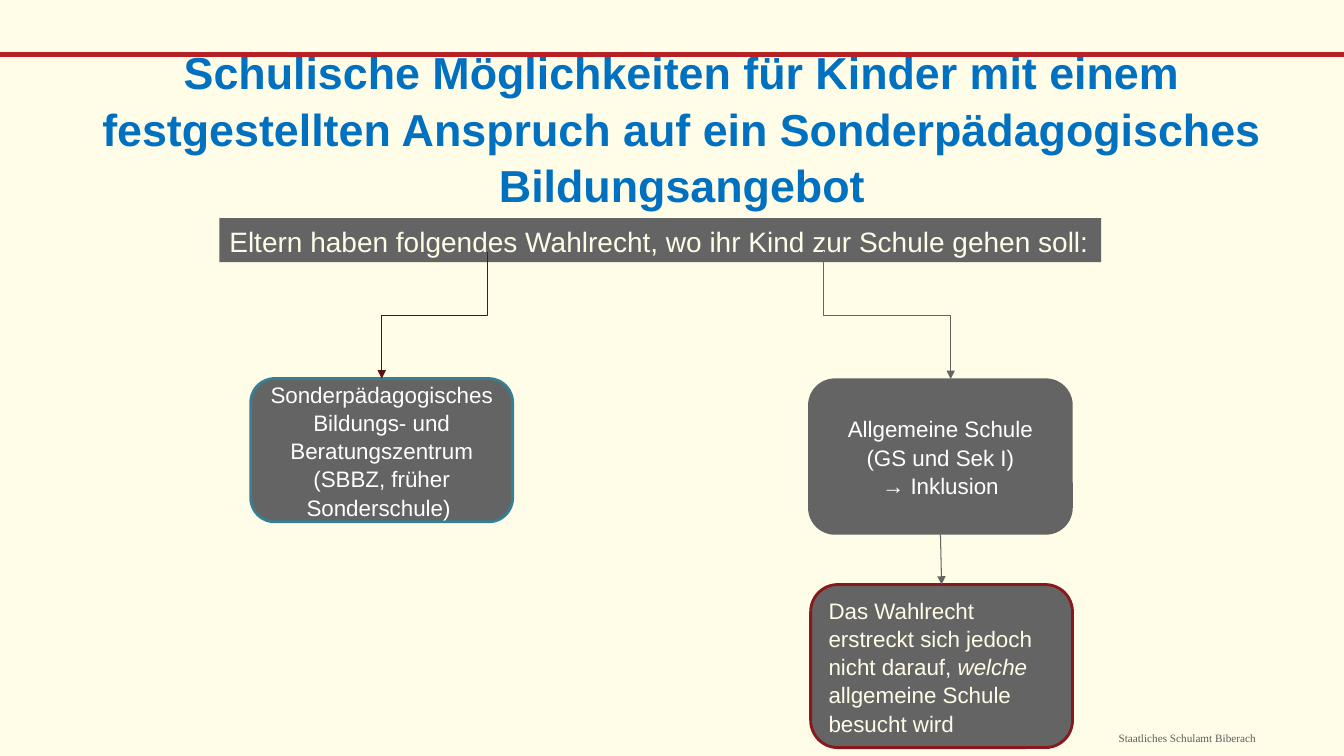
import pptx
import pptx.dml.color
import pptx.enum.shapes
import pptx.enum.text
import pptx.oxml.ns
import pptx.util
from lxml import etree

Cm = pptx.util.Cm
Pt = pptx.util.Pt
RGBColor = pptx.dml.color.RGBColor
SHAPE = pptx.enum.shapes.MSO_SHAPE
CONNECTOR = pptx.enum.shapes.MSO_CONNECTOR
ANCHOR = pptx.enum.text.MSO_ANCHOR
ALIGN = pptx.enum.text.PP_ALIGN
qn = pptx.oxml.ns.qn

CREAM = RGBColor(0xFF, 0xFC, 0xE7)
WHITE = RGBColor(0xFF, 0xFF, 0xFF)
GRAY = RGBColor(0x64, 0x64, 0x64)
FOOTER_GRAY = RGBColor(0x5D, 0x5D, 0x5D)
RED = RGBColor(0xB7, 0x20, 0x25)
DARK_RED = RGBColor(0x87, 0x18, 0x1B)
MAROON = RGBColor(0x5C, 0x10, 0x13)
TEAL = RGBColor(0x37, 0x7F, 0x92)
BLUE = RGBColor(0x00, 0x70, 0xC0)

LINE_SPACING = 1.05


def format_text(frame, size, color, align=ALIGN.LEFT, font="Arial", bold=False):
    frame.word_wrap = True
    for paragraph in frame.paragraphs:
        paragraph.alignment = align
        paragraph.line_spacing = LINE_SPACING
        for run in paragraph.runs:
            run.font.name = font
            run.font.size = Pt(size)
            run.font.bold = bold
            run.font.color.rgb = color


def add_block(slide, preset, box, fill, outline=None, width=2):
    block = slide.shapes.add_shape(preset, *map(Cm, box))
    block.shadow.inherit = False
    block.fill.solid()
    block.fill.fore_color.rgb = fill
    if outline is None:
        block.line.fill.background()
    else:
        block.line.color.rgb = outline
        block.line.width = Pt(width)
    block.text_frame.vertical_anchor = ANCHOR.MIDDLE
    return block


def add_arrow(slide, kind, start, end, color):
    arrow = slide.shapes.add_connector(kind, *map(Cm, start + end))
    arrow.line.color.rgb = color
    arrow.line.width = Pt(0.75)
    properties = arrow._element.spPr
    line = properties.find(qn("a:ln"))
    etree.SubElement(line, qn("a:tailEnd"), type="triangle")
    etree.SubElement(properties, qn("a:effectLst"))
    return arrow


def add_falling_elbow(slide, start, end, color):
    center_x = (start[0] + end[0]) / 2
    center_y = (start[1] + end[1]) / 2
    half_width = (end[1] - start[1]) / 2
    half_height = abs(end[0] - start[0]) / 2
    to_right = end[0] > start[0]
    if to_right:
        half_width = -half_width
    elbow = add_arrow(
        slide, CONNECTOR.ELBOW,
        (center_x - half_width, center_y - half_height),
        (center_x + half_width, center_y + half_height), color)
    degrees = 270 if to_right else 90
    elbow._element.spPr.find(qn("a:xfrm")).set("rot", str(degrees * 60000))


def add_title(slide):
    title = slide.shapes.title
    title.left, title.top, title.width, title.height = map(Cm, (2.13, 1.85, 30.12, 3.48))
    frame = title.text_frame
    frame.text = ("Schulische Möglichkeiten für Kinder mit einem festgestellten "
                  "Anspruch auf ein Sonderpädagogisches Bildungsangebot")
    frame.auto_size = pptx.enum.text.MSO_AUTO_SIZE.NONE
    frame.vertical_anchor = ANCHOR.BOTTOM
    frame.margin_left = frame.margin_right = frame.margin_top = frame.margin_bottom = 0
    format_text(frame, 32, BLUE, ALIGN.CENTER, bold=True)


def add_footer(slide):
    footer = slide.shapes.add_textbox(*map(Cm, (27.94, 18.29, 5.18, 0.61)))
    footer.text_frame.text = "Staatliches Schulamt Biberach"
    format_text(footer.text_frame, 8, FOOTER_GRAY, font="Times New Roman")


def add_restriction(slide):
    restriction = add_block(slide, SHAPE.ROUNDED_RECTANGLE,
                            (20.43, 14.73, 6.6, 4.11), GRAY, DARK_RED)
    paragraph = restriction.text_frame.paragraphs[0]
    for wording, italic in (
            ("Das Wahlrecht erstreckt sich jedoch nicht darauf, ", False),
            ("welche", True),
            (" allgemeine Schule besucht wird", False)):
        run = paragraph.add_run()
        run.text = wording
        run.font.italic = italic
    format_text(restriction.text_frame, 16, CREAM)
    return restriction


def main():
    presentation = pptx.Presentation()
    presentation.slide_width = Cm(33.87)
    presentation.slide_height = Cm(19.05)
    slide = presentation.slides.add_slide(presentation.slide_layouts[5])
    slide.background.fill.solid()
    slide.background.fill.fore_color.rgb = CREAM

    add_footer(slide)
    add_block(slide, SHAPE.RECTANGLE, (0, 1.32, 33.87, 0.1), RED, RED, 0.75)
    add_title(slide)

    choice = add_block(slide, SHAPE.RECTANGLE, (5.53, 5.5, 22.22, 1.11), GRAY)
    choice.text_frame.text = ("Eltern haben folgendes Wahlrecht, "
                              "wo ihr Kind zur Schule gehen soll:")
    format_text(choice.text_frame, 20, CREAM)

    add_falling_elbow(slide, (20.75, 6.33), (23.96, 9.55), GRAY)

    general_school = add_block(slide, SHAPE.ROUNDED_RECTANGLE,
                               (20.4, 9.57, 6.6, 3.87), GRAY, GRAY)
    general_school.text_frame.text = "Allgemeine Schule\n(GS und Sek I)\n→ Inklusion"
    format_text(general_school.text_frame, 16, WHITE, ALIGN.CENTER)

    special_school = add_block(slide, SHAPE.ROUNDED_RECTANGLE,
                               (6.32, 9.54, 6.6, 3.61), GRAY, TEAL)
    special_school.text_frame.text = (
        "Sonderpädagogisches Bildungs- und Beratungszentrum\n"
        "(SBBZ, früher Sonderschule) ")
    format_text(special_school.text_frame, 16, WHITE, ALIGN.CENTER)

    add_falling_elbow(slide, (12.28, 6.35), (9.62, 9.54), MAROON)

    restriction = add_restriction(slide)
    limit_arrow = add_arrow(slide, CONNECTOR.STRAIGHT,
                            (23.7, 13.44), (23.73, 14.73), GRAY)
    limit_arrow.begin_connect(general_school, 2)
    limit_arrow.end_connect(restriction, 0)

    presentation.save("out.pptx")


if __name__ == "__main__":
    main()
